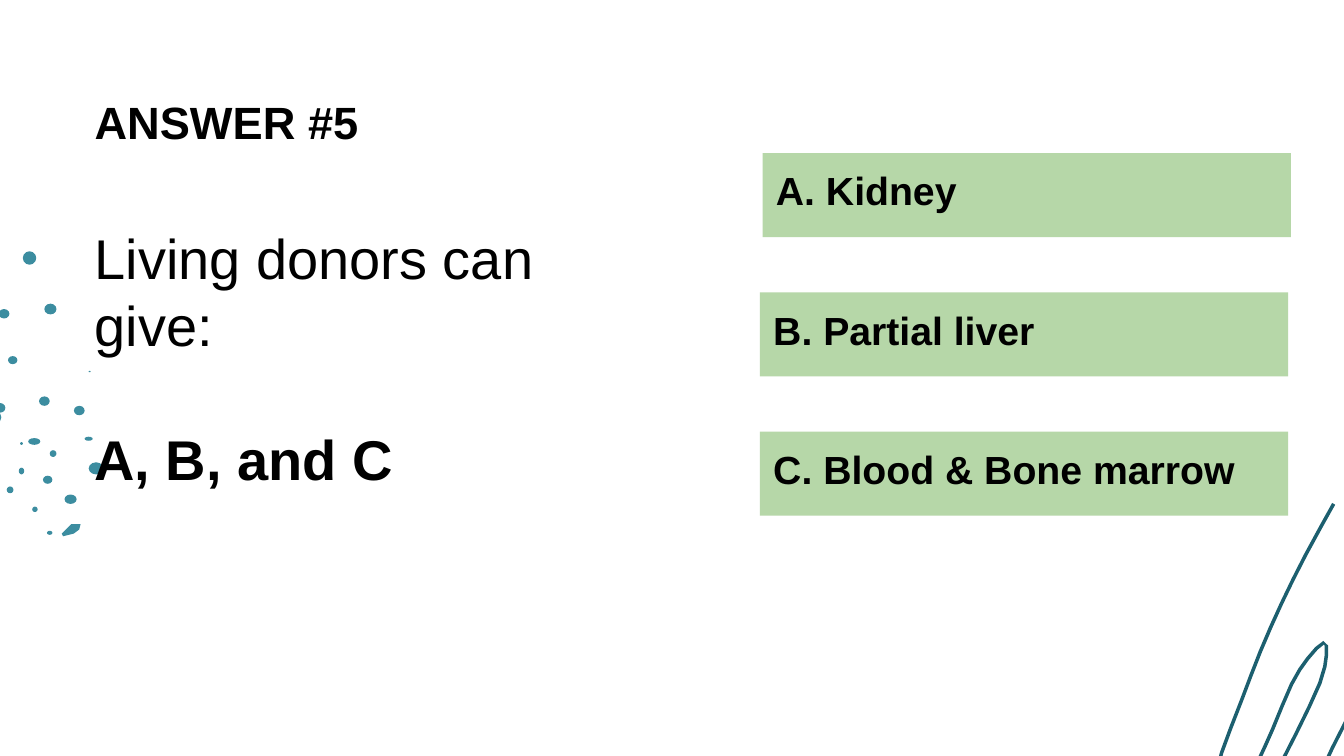
from math import cos, hypot, radians, sin

from pptx import Presentation
from pptx.dml.color import RGBColor
from pptx.enum.shapes import MSO_SHAPE
from pptx.enum.text import MSO_ANCHOR
from pptx.util import Inches, Pt

RECT, OVAL = MSO_SHAPE.RECTANGLE, MSO_SHAPE.OVAL
TOP, MIDDLE = MSO_ANCHOR.TOP, MSO_ANCHOR.MIDDLE
BLACK = RGBColor(0, 0, 0)
GREEN = RGBColor(0xB6, 0xD7, 0xA8)
TEAL = RGBColor(0x3C, 0x8D, 0xA0)
DEEP = RGBColor(0x1C, 0x5F, 0x6F)
CELL = Inches(0.1)
COLS, ROWS = 100, 56.25
TILT = 41.5
BOX = (88.2, 42.6, 24.7, 23.7)

DOTS = [
    (-1.2, 30.5, 1.3, 1.1), (1.5, 32.9, 0.2, 0.2), (1.4, 34.8, 0.4, 0.5),
    (2.4, 37.7, 0.4, 0.4), (3.5, 39.5, 0.4, 0.3), (4.8, 36.8, 0.9, 0.7),
    (3.2, 35.4, 0.7, 0.6), (0.5, 36.2, 0.5, 0.5), (3.7, 33.5, 0.5, 0.5),
    (2.1, 32.6, 0.9, 0.5), (2.9, 29.5, 0.8, 0.7), (-0.3, 30, 0.7, 0.7),
    (0.6, 26.5, 0.7, 0.6), (-0.1, 23, 0.8, 0.7), (6.6, 27.6, 0.15, 0.1),
    (5.5, 30.2, 0.8, 0.7), (6.3, 32.5, 0.6, 0.3), (6.6, 34.4, 1.1, 0.9),
    (3.3, 22.6, 0.9, 0.8), (1.7, 18.7, 1, 1),
]
LEAF = [
    (5.6, 39), (5.3, 39), (4.9, 39.4), (4.6, 39.7), (4.7, 39.9),
    (5.5, 39.7), (5.9, 39.4), (6, 39), (5.6, 39),
]
SCRAWL = [
    (99.2, 37.5), (97.1, 41.3), (95.3, 44.9), (93.7, 48.5), (92.3, 52.1),
    (90.8, 56), (90.6, 57.3), (90.9, 58.5), (91.7, 58.7), (92.7, 58),
    (93.5, 56.6), (94.6, 54.2), (96, 50.9), (97.2, 49), (98.4, 47.8),
    (98.6, 48.7), (98.1, 50.8), (96.3, 54.6), (94.4, 58.3), (93.2, 61),
    (93.2, 63.7), (94.1, 63.8), (95.6, 62.8), (97.3, 59.3), (99, 55.6),
    (101.2, 51.5), (103, 49.2), (103.9, 48.8), (104.2, 50.5), (102.6, 55),
    (99, 62), (97.2, 66.6), (97.6, 67.1), (98.5, 66.9), (99.6, 65.6),
    (103, 58.4), (105, 54.5), (106.4, 52.4), (107.4, 51.8), (108.2, 52.1),
    (108.4, 53.6), (107.7, 56), (104, 62.7), (101.2, 67.6), (101, 69),
    (102, 69.8), (103.2, 69.5), (105.2, 66.4), (110, 56.5),
]


def span(*cells):
    """Turn grid cells into lengths."""
    return [round(CELL * cell) for cell in cells]


def paint(shape, color):
    """Give a shape a plain fill without line or shadow."""
    shape.shadow.inherit = False
    shape.fill.solid()
    shape.fill.fore_color.rgb = color
    shape.line.fill.background()
    return shape


def solid(slide, kind, box, color):
    """Add a filled preset shape."""
    return paint(slide.shapes.add_shape(kind, *span(*box)), color)


def text(slide, box, lines, size=21, bold=True, anchor=TOP, lead=0):
    """Add wrapped text, with only the last line bold if bold is 'last'."""
    frame = slide.shapes.add_textbox(*span(*box)).text_frame
    frame.word_wrap = True
    frame.vertical_anchor = anchor
    frame.margin_left = frame.margin_right = CELL
    frame.margin_top = frame.margin_bottom = CELL
    for index, line in enumerate(lines):
        para = frame.paragraphs[0] if index == 0 else frame.add_paragraph()
        if index:
            para.space_before = Pt(lead)
        run = para.add_run()
        run.text = line
        run.font.name, run.font.size = "Arial", Pt(size)
        run.font.bold = line == lines[-1] if bold == "last" else bold
        run.font.color.rgb = BLACK


def smooth(knots, steps=2):
    """Pass a Catmull-Rom curve through the knots."""
    ends = [knots[0], *knots, knots[-1]]
    curve = []
    for a, b, c, d in zip(ends, ends[1:], ends[2:], ends[3:]):
        for step in range(steps):
            t = step / steps
            curve.append(tuple(
                q + t * (r - p) / 2 + t * t * (p - 2.5 * q + 2 * r - s / 2)
                + t ** 3 * (3 * q - 3 * r + s - p) / 2
                for p, q, r, s in zip(a, b, c, d)))
    return [*curve, knots[-1]]


def ribbon(curve, half=0.13):
    """Outline a band of even width along a curve."""
    left, right = [], []
    ends = [curve[0], *curve, curve[-1]]
    for (ax, ay), (x, y), (bx, by) in zip(ends, curve, ends[2:]):
        size = hypot(bx - ax, by - ay)
        dx, dy = half * (ay - by) / size, half * (bx - ax) / size
        left.append((x + dx, y + dy))
        right.append((x - dx, y - dy))
    return left + right[::-1]


def turn(points, angle, box):
    """Turn points about the middle of a box."""
    mx, my = box[0] + box[2] / 2, box[1] + box[3] / 2
    c, s = cos(radians(angle)), sin(radians(angle))
    return [(mx + (x - mx) * c - (y - my) * s,
             my + (x - mx) * s + (y - my) * c) for x, y in points]


def blob(slide, points, color):
    """Add a filled closed outline."""
    pen = slide.shapes.build_freeform(*span(*points[0]))
    pen.add_line_segments([span(*point) for point in points[1:]])
    return paint(pen.convert_to_shape(), color)


def decor(slide):
    """Draw the dots, the leaf and the looping scrawl."""
    blob(slide, LEAF, TEAL)
    for box in DOTS:
        solid(slide, OVAL, box, TEAL)
    loop = blob(slide, turn(ribbon(smooth(SCRAWL)), -TILT, BOX), DEEP)
    loop.left, loop.top, loop.width, loop.height = span(*BOX)
    loop.rotation = TILT


def option(slide, left, top, label):
    """Add one green answer bar."""
    solid(slide, RECT, (left, top, 39.3, 6.25), GREEN)
    text(slide, (left, top, 39.3, 5.2), [label])


def main():
    """Build and save the slide."""
    deck = Presentation()
    deck.slide_width, deck.slide_height = span(COLS, ROWS)
    slide = deck.slides.add_slide(deck.slide_layouts[6])
    decor(slide)
    text(slide, (6.05, 15.6, 39.3, 38.4),
         ["Living donors can give:", "A, B, and C"],
         size=30, bold="last", lead=36)
    text(slide, (6.05, 6.05, 93.95, 6.3), ["ANSWER #5"],
         size=24.2, anchor=TOP)
    labels = ["A. Kidney", "B. Partial liver", "C. Blood & Bone marrow"]
    for row, label in enumerate(labels):
        option(slide, 56.55 if row else 56.75, 11.4 + 10.36 * row, label)
    deck.save("out.pptx")


if __name__ == "__main__":
    main()
